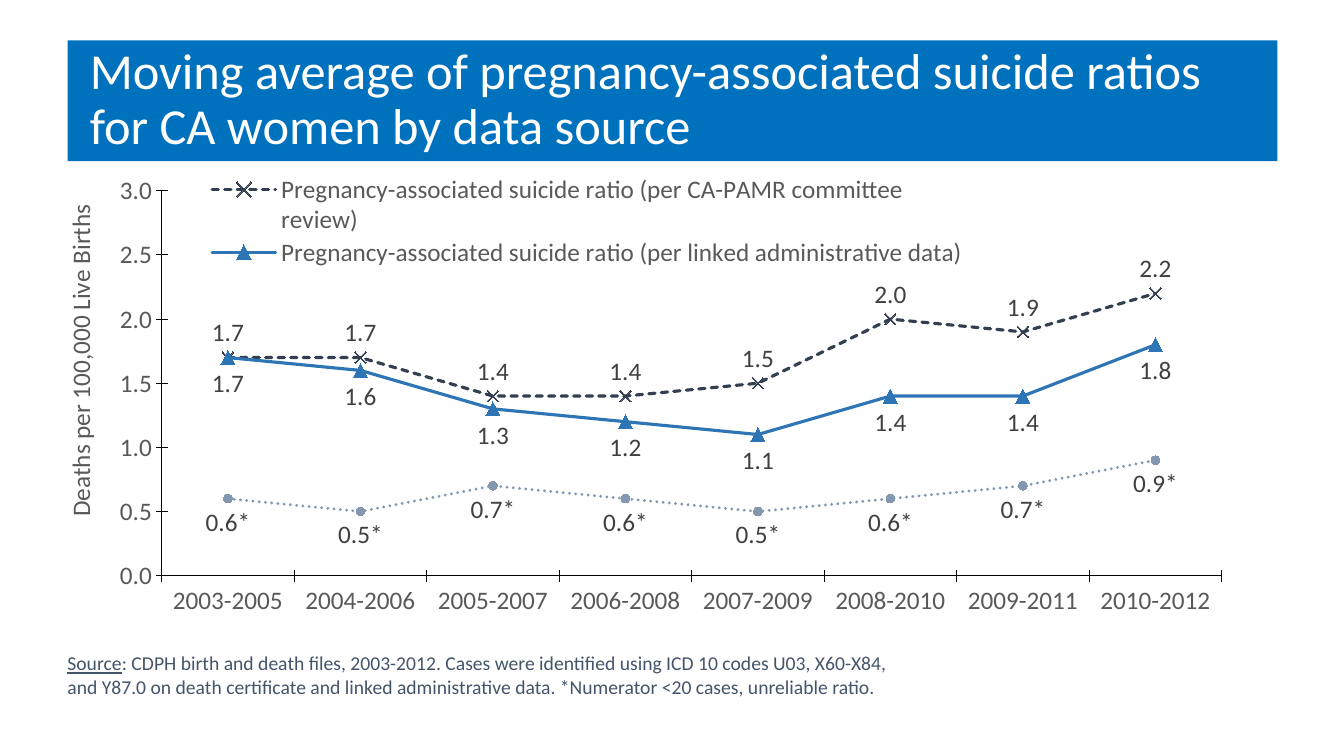
from lxml import etree
from pptx import Presentation
from pptx import util as u
from pptx.chart.data import CategoryChartData
from pptx.dml.color import RGBColor
from pptx.enum import chart as ch, dml, text
from pptx.oxml.ns import qn

FONT = "Calibri"
COLORS = {
    "banner": "0071BC", "white": "FFFFFF", "source": "44546A", "axis": "000000",
    "axis_text": "595959", "label": "404040",
    "committee": "333F50", "linked": "2E75B6", "starred": "8497B0",
}
TITLE = "Moving average of pregnancy-associated suicide ratios for CA women by data source"
AXIS_TITLE = "Deaths per 100,000 Live Births"
SOURCE = [
    ("Source", True),
    (": CDPH birth and death files, 2003-2012. Cases were identified using ICD 10 codes "
     "U03, X60-X84, and Y87.0 on death certificate and linked administrative data. "
     "*Numerator <20 cases, unreliable ratio.", False),
]
PERIODS = [f"{year}-{year + 2}" for year in range(2003, 2011)]
MARK, DASH, POS = ch.XL_MARKER_STYLE, dml.MSO_LINE, ch.XL_LABEL_POSITION
RATIOS = [
    ("Pregnancy-associated suicide ratio (per CA-PAMR committee review)",
     (1.7, 1.7, 1.4, 1.4, 1.5, 2.0, 1.9, 2.2),
     "committee", DASH.SQUARE_DOT, MARK.X, 8, POS.ABOVE, "0.0"),
    ("Pregnancy-associated suicide ratio (per linked administrative data)",
     (1.7, 1.6, 1.3, 1.2, 1.1, 1.4, 1.4, 1.8),
     "linked", DASH.SOLID, MARK.TRIANGLE, 10, POS.BELOW, "0.0"),
    ("", (0.6, 0.5, 0.7, 0.6, 0.5, 0.6, 0.7, 0.9),
     "starred", DASH.ROUND_DOT, MARK.CIRCLE, 6, POS.BELOW, '0.0"*"'),
]
PLACES = {
    "title": (0.67, 0.4, 12, 1.2),
    "chart": (0.46, 1.71, 11.92, 4.59),
    "source": (0.57, 6.41, 8.51, 0.57),
}
PLOT = {"x": 0.096, "y": 0.04, "w": 0.882, "h": 0.832}
LEGEND = {"x": 0.13, "y": 0, "w": 0.64, "h": 0.21}
AXIS_TITLE_SPOT = {"x": 0.01, "y": 0.06}


def rgb(name):
    return RGBColor.from_string(COLORS[name])


def place(part):
    return [u.Inches(n) for n in PLACES[part]]


def style(font, size, color):
    font.name, font.size, font.bold = FONT, u.Pt(size), False
    font.color.rgb = rgb(color)


def layout(shares, inner=False):
    box = etree.Element(qn("c:layout"))
    manual = etree.SubElement(box, qn("c:manualLayout"))
    if inner:
        etree.SubElement(manual, qn("c:layoutTarget")).set("val", "inner")
    for side in "xy":
        etree.SubElement(manual, qn(f"c:{side}Mode")).set("val", "edge")
    for side, share in shares.items():
        etree.SubElement(manual, qn(f"c:{side}")).set("val", str(share))
    return box


def set_layout(parent, box, after=None):
    for old in parent.findall(qn("c:layout")):
        parent.remove(old)
    if after is None:
        parent.insert(0, box)
    else:
        parent.find(qn(after)).addnext(box)


def add_title(slide):
    banner = slide.shapes.title
    banner.left, banner.top, banner.width, banner.height = place("title")
    banner.fill.solid()
    banner.fill.fore_color.rgb = rgb("banner")
    frame = banner.text_frame
    frame.word_wrap = True
    frame.auto_size = text.MSO_AUTO_SIZE.NONE
    frame.vertical_anchor = text.MSO_ANCHOR.MIDDLE
    line = frame.paragraphs[0]
    line.alignment = text.PP_ALIGN.LEFT
    line.line_spacing = 0.9
    line._p.get_or_add_pPr().set("marL", str(u.Inches(0.12)))
    run = line.add_run()
    run.text = TITLE
    style(run.font, 36, "white")


def add_ratios(slide):
    data = CategoryChartData(number_format="0.0")
    data.categories = PERIODS
    for name, values, *_ in RATIOS:
        data.add_series(name, values)
    chart = slide.shapes.add_chart(ch.XL_CHART_TYPE.LINE_MARKERS, *place("chart"), data).chart
    chart.has_title = False
    style(chart.font, 12, "axis")
    plot = chart.plots[0]
    plot.vary_by_categories = False
    set_layout(chart._chartSpace.chart.plotArea, layout(PLOT, inner=True))

    for series, (_, _, color, dash, mark, size, pos, fmt) in zip(plot.series, RATIOS):
        series.smooth = False
        stroke = series.format.line
        stroke.width = u.Pt(2.25)
        stroke.color.rgb = rgb(color)
        stroke.dash_style = dash
        stroke._get_or_add_ln().set("cap", "rnd")
        marker = series.marker
        marker.style, marker.size = mark, size
        if mark == MARK.X:
            marker.format.fill.background()
        else:
            marker.format.fill.solid()
            marker.format.fill.fore_color.rgb = rgb(color)
        marker.format.line.color.rgb = rgb(color)
        labels = series.data_labels
        labels.show_value = True
        labels.position = pos
        labels.number_format, labels.number_format_is_linked = fmt, False
        style(labels.font, 18, "label")

    for axis in (chart.category_axis, chart.value_axis):
        axis.has_major_gridlines = False
        axis.major_tick_mark = ch.XL_TICK_MARK.CROSS
        axis.minor_tick_mark = ch.XL_TICK_MARK.NONE
        axis.format.line.color.rgb = rgb("axis")
        axis.format.line.width = u.Pt(0.75)
        style(axis.tick_labels.font, 18, "axis_text")
    ratio_axis = chart.value_axis
    ratio_axis.minimum_scale, ratio_axis.maximum_scale, ratio_axis.major_unit = 0, 3, 0.5
    ratio_axis.tick_labels.number_format = "0.0"
    ratio_axis.tick_labels.number_format_is_linked = False
    caption = ratio_axis.axis_title
    run = caption.text_frame.paragraphs[0].add_run()
    run.text = AXIS_TITLE
    style(run.font, 18, "axis_text")
    caption.text_frame._txBody.find(qn("a:bodyPr")).set("rot", "-5400000")
    set_layout(caption._element, layout(AXIS_TITLE_SPOT), "c:tx")

    chart.has_legend = True
    legend = chart.legend
    legend.position = ch.XL_LEGEND_POSITION.TOP
    legend.include_in_layout = True
    style(legend.font, 18, "axis_text")
    unnamed = etree.Element(qn("c:legendEntry"))
    etree.SubElement(unnamed, qn("c:idx")).set("val", str(len(RATIOS) - 1))
    etree.SubElement(unnamed, qn("c:delete")).set("val", "1")
    legend._element.find(qn("c:legendPos")).addnext(unnamed)
    set_layout(legend._element, layout(LEGEND), "c:legendEntry")


def add_source(slide):
    frame = slide.shapes.add_textbox(*place("source")).text_frame
    frame.word_wrap = True
    frame.auto_size = text.MSO_AUTO_SIZE.SHAPE_TO_FIT_TEXT
    for words, underlined in SOURCE:
        run = frame.paragraphs[0].add_run()
        run.text = words
        style(run.font, 14, "source")
        run.font.underline = underlined


def main():
    deck = Presentation()
    deck.slide_width, deck.slide_height = u.Inches(13.33), u.Inches(7.5)
    slide = deck.slides.add_slide(deck.slide_layouts[5])
    add_title(slide)
    add_ratios(slide)
    add_source(slide)
    deck.save("out.pptx")


if __name__ == "__main__":
    main()
